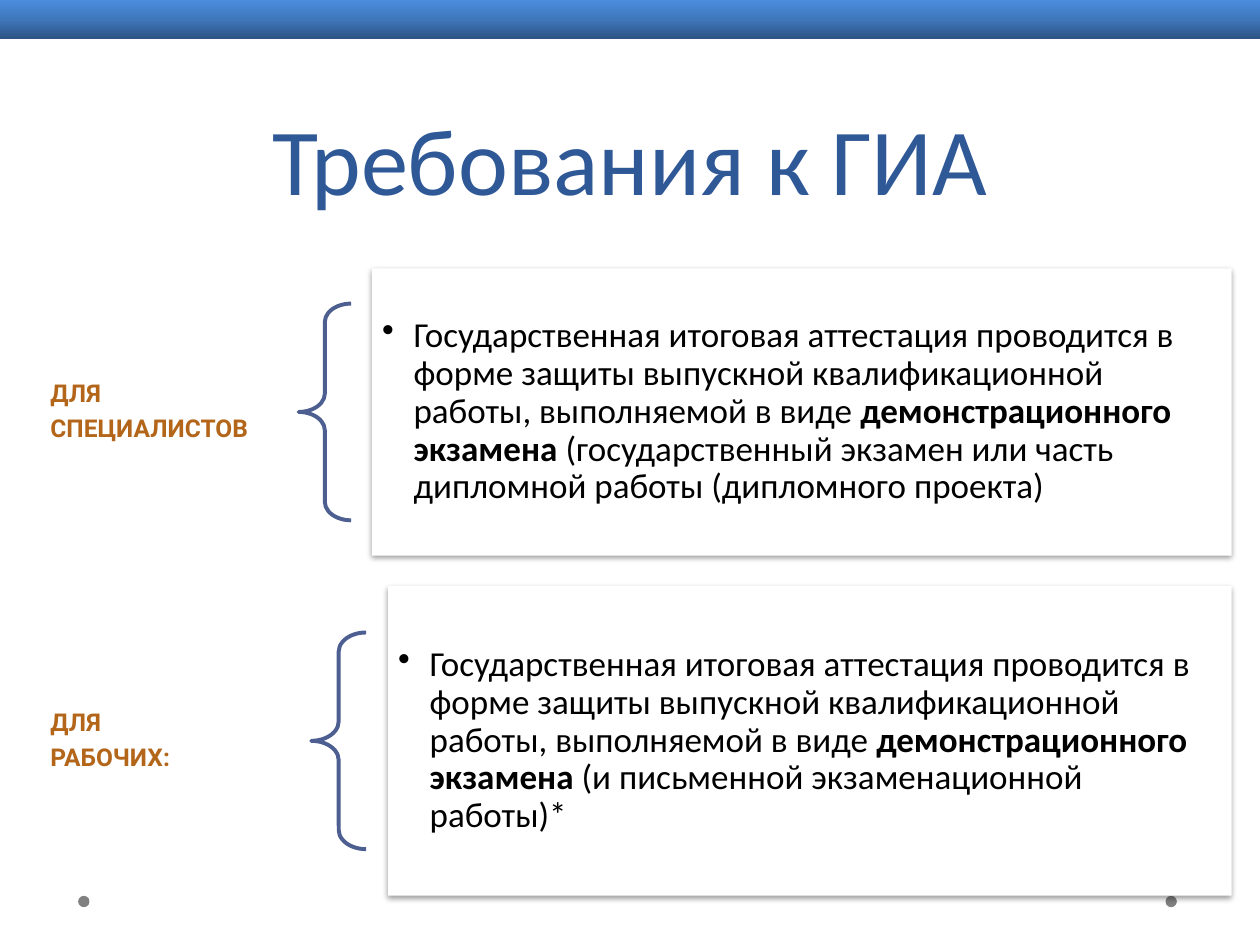
from dataclasses import dataclass
from lxml.etree import SubElement
from pptx import Presentation
from pptx.dml.color import RGBColor
from pptx.enum.shapes import MSO_SHAPE
from pptx.enum.text import MSO_ANCHOR, PP_ALIGN
from pptx.oxml import parse_xml
from pptx.oxml.ns import nsdecls, qn
from pptx.util import Emu, Inches, Pt


@dataclass(frozen=True)
class Theme:
    """Colours, fonts and type sizes of the slide."""
    title: str = "2F5897"
    label: str = "B36619"
    brace: str = "4D5E90"
    dot: str = "808080"
    card: str = "FFFFFF"
    ink: str = "000000"
    banner: tuple = ((0, "2D5484"), (50, "3F77BB"), (100, "4B8DDE"))
    sans: str = "Calibri"
    caps: str = "Roboto"
    big: int = 54
    body: int = 20
    small: int = 14


@dataclass(frozen=True)
class Box:
    """A rectangle in percent of the slide's width and height."""
    left: float
    top: float
    width: float
    height: float


@dataclass(frozen=True)
class Rule:
    """One group of students with its exam rule."""
    label: tuple
    tail: str
    mid: float
    span: float
    tall: float


LOOK = Theme()
WIDTH, HEIGHT = Inches(10), Inches(7.5)
EDGE, RIGHT = 2.9, 97.75
LEAD = ("Государственная итоговая аттестация проводится в форме защиты "
        "выпускной квалификационной работы, выполняемой в виде ")
BOLD = "демонстрационного экзамена"
RULES = (
    Rule(("ДЛЯ", "СПЕЦИАЛИСТОВ"),
         " (государственный экзамен или часть дипломной работы (дипломного проекта)",
         43.6, 20.8, 30.4),
    Rule(("ДЛЯ", "РАБОЧИХ:"),
         " (и письменной экзаменационной работы)*", 78.4, 21.8, 32.8),
)


def place(box: Box) -> tuple:
    """Turn percent into slide lengths."""
    return (Emu(int(WIDTH * box.left / 100)), Emu(int(HEIGHT * box.top / 100)),
            Emu(int(WIDTH * box.width / 100)), Emu(int(HEIGHT * box.height / 100)))


def center(left: float, mid: float, width: float, height: float) -> Box:
    """Give a box centred on a height."""
    return Box(left, mid - height / 2, width, height)


def shape(slide, kind, box: Box, fill: str = ""):
    """Draw a flat shape without an outline."""
    item = slide.shapes.add_shape(kind, *place(box))
    item.shadow.inherit = False
    item.line.fill.background()
    if fill:
        item.fill.solid()
        item.fill.fore_color.rgb = RGBColor.from_string(fill)
    else:
        item.fill.background()
    return item


def frame(slide, box: Box, anchor, side: float, edge: float):
    """Add a wrapping text box and return its frame."""
    text = slide.shapes.add_textbox(*place(box)).text_frame
    text.word_wrap = True
    text.vertical_anchor = anchor
    text.margin_left = text.margin_right = Inches(side)
    text.margin_top = text.margin_bottom = Inches(edge)
    return text


def style(para, face: str, size: int, color: str) -> None:
    """Set the font of a paragraph."""
    para.font.name = face
    para.font.size = Pt(size)
    para.font.color.rgb = RGBColor.from_string(color)


def banner(slide) -> None:
    """Draw the gradient band along the top."""
    item = shape(slide, MSO_SHAPE.RECTANGLE, Box(0, 0, 100, 4.13))
    stops = "".join(f'<a:gs pos="{pos * 1000}"><a:srgbClr val="{color}"/></a:gs>'
                    for pos, color in LOOK.banner)
    item.fill.gradient()
    item.fill.gradient_angle = 90
    grad = item.element.spPr.find(qn("a:gradFill"))
    grad.replace(grad.find(qn("a:gsLst")),
                 parse_xml(f'<a:gsLst {nsdecls("a")}>{stops}</a:gsLst>'))


def title(slide) -> None:
    """Write the heading."""
    text = frame(slide, Box(5, 0, 90, 23.33), MSO_ANCHOR.BOTTOM, 0.1, 0.05)
    para = text.paragraphs[0]
    para.text = "Требования к ГИА"
    para.alignment = PP_ALIGN.CENTER
    para.line_spacing = Pt(58)
    style(para, LOOK.sans, LOOK.big, LOOK.title)


def label(slide, box: Box, lines: tuple) -> None:
    """Write the name of a group."""
    text = frame(slide, box, MSO_ANCHOR.MIDDLE, 0.11, 0.04)
    for i, line in enumerate(lines):
        para = text.add_paragraph() if i else text.paragraphs[0]
        para.text = line
        para.line_spacing = 0.9
        para.space_after = Pt(5)
        style(para, LOOK.caps, LOOK.small, LOOK.label)
        para.font.bold = True


def brace(slide, box: Box) -> None:
    """Draw a left brace."""
    item = shape(slide, MSO_SHAPE.LEFT_BRACE, box)
    item.adjustments[0] = 0.35
    item.line.color.rgb = RGBColor.from_string(LOOK.brace)
    item.line.width = Pt(2.25)


def card(slide, box: Box, tail: str) -> None:
    """Draw a shadowed card with a bulleted rule."""
    item = shape(slide, MSO_SHAPE.RECTANGLE, box, LOOK.card)
    glow = SubElement(item.element.spPr.find(qn("a:effectLst")), qn("a:outerShdw"),
                      blurRad=str(Pt(3.1)), dist=str(Pt(1.6)), dir="5400000",
                      rotWithShape="0")
    tint = SubElement(glow, qn("a:srgbClr"), val=LOOK.ink)
    SubElement(tint, qn("a:alpha"), val="38000")
    para = frame(slide, box, MSO_ANCHOR.MIDDLE, 0.08, 0.08).paragraphs[0]
    para.level = 1
    para.line_spacing = 0.9
    para.space_after = Pt(3)
    props = para._p.get_or_add_pPr()
    props.set("marL", str(Inches(0.25)))
    props.set("indent", str(Inches(-0.25)))
    SubElement(props, qn("a:buChar"), char="•")
    style(para, LOOK.sans, LOOK.body, LOOK.ink)
    for words in (LEAD, BOLD, tail):
        run = para.add_run()
        run.text = words
        run.font.bold = words == BOLD


def main() -> None:
    """Build and save the slide."""
    deck = Presentation()
    deck.slide_width, deck.slide_height = WIDTH, HEIGHT
    slide = deck.slides.add_slide(deck.slide_layouts[6])
    for left in (92.5, 6.2):
        shape(slide, MSO_SHAPE.OVAL, Box(left, 94.8, 0.9, 1.2), LOOK.dot)
    title(slide)
    banner(slide)
    for rule in RULES:
        label(slide, center(EDGE, rule.mid, rule.span, 18.8), rule.label)
        brace(slide, center(EDGE + rule.span, rule.mid, rule.span * 0.2, 22.93))
        left = EDGE + rule.span * 1.28
        card(slide, center(left, rule.mid, RIGHT - left, rule.tall), rule.tail)
    deck.save("out.pptx")


if __name__ == "__main__":
    main()
